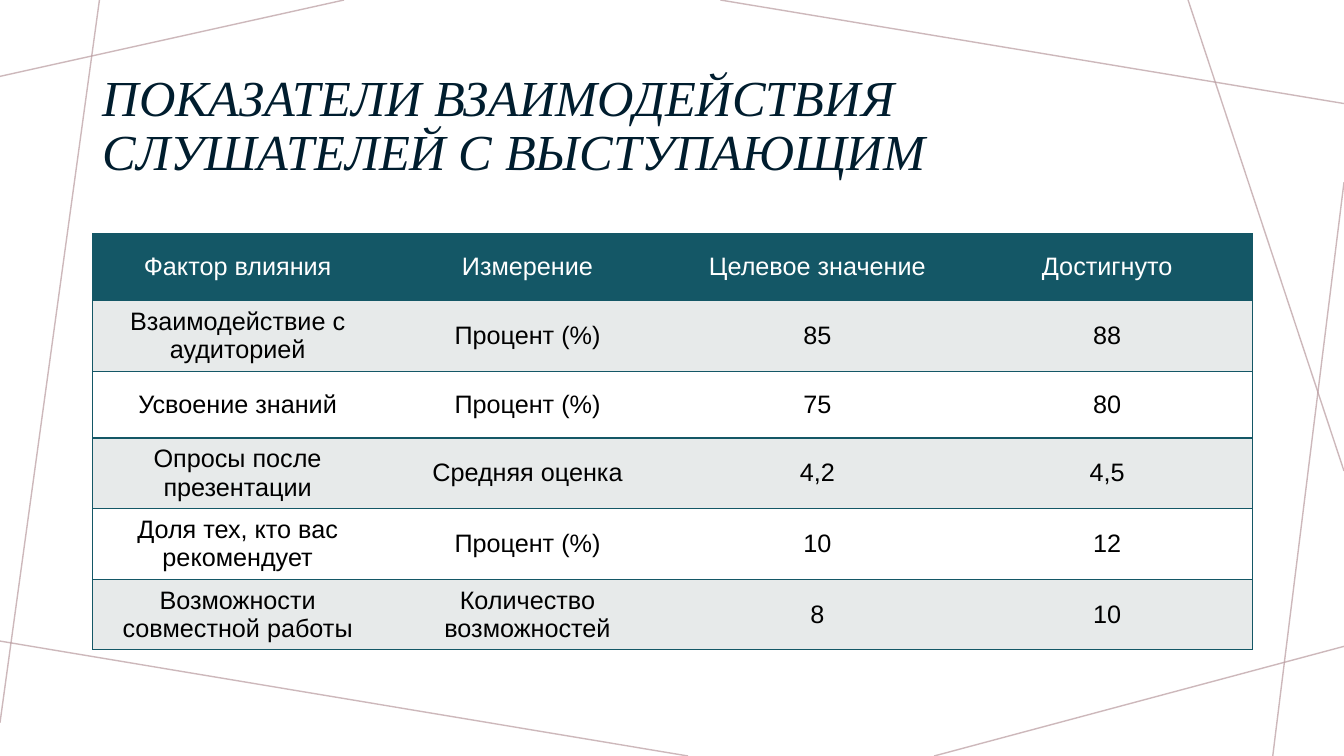
from lxml.etree import SubElement
from pptx import Presentation
from pptx.dml.color import RGBColor
from pptx.enum.shapes import MSO_CONNECTOR
from pptx.enum.text import MSO_ANCHOR, PP_ALIGN
from pptx.oxml.ns import qn
from pptx.util import Inches, Pt

WIDTH, HEIGHT = Inches(13.33), Inches(7.5)
TEAL, STRIPE, WHITE, BLACK = "145766", "E7EAEA", "FFFFFF", "000000"
NAVY, ROSE = "001D2E", "B99B9F"
MARGIN, CONTENT = 6.9, 86.27  # percent of the slide's width
NO_STYLE = "{2D5ABB26-0587-4C30-8999-92F81FD0307C}"

# Start and end of each background line, in percent of the slide's size
RAYS = [
    (25.6, 0, 0, 10.1),
    (7.4, 0, 0, 95.6),
    (51.2, 100, 0, 84.8),
    (100, 85.5, 69.5, 100),
    (100, 24.1, 94.7, 100),
    (100, 62.3, 88.4, 0),
    (100, 13.7, 53.6, 0),
]

TITLE = "ПОКАЗАТЕЛИ ВЗАИМОДЕЙСТВИЯ СЛУШАТЕЛЕЙ С ВЫСТУПАЮЩИМ"
INDICATORS = [
    ("Фактор влияния", "Измерение", "Целевое значение", "Достигнуто"),
    ("Взаимодействие с аудиторией", "Процент (%)", "85", "88"),
    ("Усвоение знаний", "Процент (%)", "75", "80"),
    ("Опросы после презентации", "Средняя оценка", "4,2", "4,5"),
    ("Доля тех, кто вас рекомендует", "Процент (%)", "10", "12"),
    ("Возможности совместной работы", "Количество возможностей", "8", "10"),
]


def rgb(color):
    return RGBColor.from_string(color)


def across(percent):
    return round(WIDTH * percent / 100)


def down(percent):
    return round(HEIGHT * percent / 100)


def set_font(paragraph, name, size, color, italic=False):
    font = paragraph.font
    font.name, font.size, font.italic = name, Pt(size), italic
    font.color.rgb = rgb(color)


def add_ray(slide, x1, y1, x2, y2):
    """Draw one thin, partly transparent background line."""
    ray = slide.shapes.add_connector(
        MSO_CONNECTOR.STRAIGHT, across(x1), down(y1), across(x2), down(y2))
    ray.line.width = Pt(1)
    ray.line.color.rgb = rgb(ROSE)
    tint = ray.line._ln.find(".//" + qn("a:srgbClr"))
    SubElement(tint, qn("a:alpha"), val="70000")
    SubElement(ray._element.spPr, qn("a:effectLst"))


def add_title(slide, text):
    box = slide.shapes.add_textbox(
        across(MARGIN), down(5.33), across(CONTENT), down(19.33))
    frame = box.text_frame
    frame.word_wrap = True
    frame.vertical_anchor = MSO_ANCHOR.BOTTOM
    frame.margin_right = across(4)
    title = frame.paragraphs[0]
    title.text = text
    title.line_spacing = 0.9
    set_font(title, "Times New Roman", 36, NAVY, italic=True)


def add_border(cell, side):
    edge = SubElement(cell._tc.get_or_add_tcPr(), qn("a:ln" + side), w=str(Pt(1)))
    SubElement(SubElement(edge, qn("a:solidFill")), qn("a:srgbClr"), val=TEAL)


def fill_cell(cell, text, sides, background, color):
    for side in sides:
        add_border(cell, side)
    cell.fill.solid()
    cell.fill.fore_color.rgb = rgb(background)
    cell.vertical_anchor = MSO_ANCHOR.MIDDLE
    paragraph = cell.text_frame.paragraphs[0]
    paragraph.text = text
    paragraph.alignment = PP_ALIGN.CENTER
    set_font(paragraph, "Arial", 18, color)


def add_indicator_table(slide, rows):
    """Fill a table with a teal header, striped rows and no inner verticals."""
    row_height, last = down(8.83), len(rows[0]) - 1
    table = slide.shapes.add_table(
        len(rows), len(rows[0]), across(MARGIN), down(30.93),
        across(CONTENT), row_height * len(rows)).table
    table._tbl.tblPr.find(qn("a:tableStyleId")).text = NO_STYLE
    for r, values in enumerate(rows):
        table.rows[r].height = row_height
        background = TEAL if r == 0 else STRIPE if r % 2 else WHITE
        for c, value in enumerate(values):
            sides = {0: "LTB", last: "RTB"}.get(c, "TB")
            fill_cell(table.cell(r, c), value, sides, background,
                      BLACK if r else WHITE)


def main():
    deck = Presentation()
    deck.slide_width, deck.slide_height = WIDTH, HEIGHT
    slide = deck.slides.add_slide(deck.slide_layouts[6])
    for ray in RAYS:
        add_ray(slide, *ray)
    add_title(slide, TITLE)
    add_indicator_table(slide, INDICATORS)
    deck.save("out.pptx")


if __name__ == "__main__":
    main()
